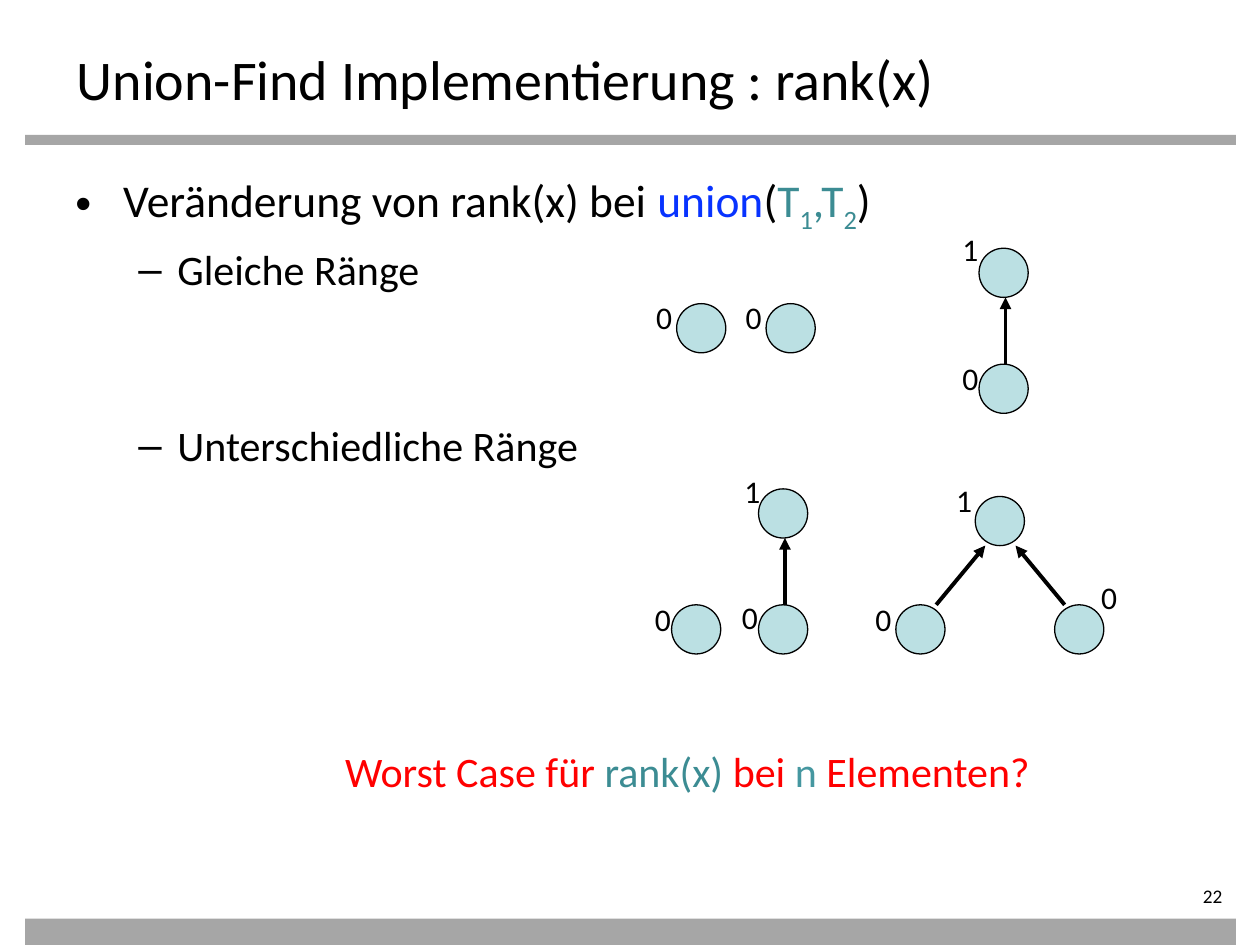
from dataclasses import dataclass

import pptx
import pptx.dml.color
import pptx.enum.shapes
import pptx.enum.text
import pptx.oxml
import pptx.oxml.ns
import pptx.util
from lxml import etree

Inches = pptx.util.Inches
Pt = pptx.util.Pt
RGBColor = pptx.dml.color.RGBColor
MSO_SHAPE = pptx.enum.shapes.MSO_SHAPE
MSO_ANCHOR = pptx.enum.text.MSO_ANCHOR
PP_ALIGN = pptx.enum.text.PP_ALIGN
qn = pptx.oxml.ns.qn

BLACK = RGBColor(0x00, 0x00, 0x00)
GREY = RGBColor(0xA6, 0xA6, 0xA6)
NODE_FILL = RGBColor(0xBB, 0xE0, 0xE3)
BLUE = RGBColor(0x08, 0x33, 0xFF)
TEAL = RGBColor(0x3C, 0x8C, 0x93)
LIGHT_TEAL = RGBColor(0x45, 0x97, 0xA0)
RED = RGBColor(0xFF, 0x00, 0x00)
FONT = "Calibri"
NODE_SIZE = 0.39


@dataclass
class Node:
    left: float
    top: float
    rank: str
    rank_left: float
    rank_top: float


@dataclass
class Arrow:
    start: tuple[float, float]
    end: tuple[float, float]


@dataclass
class Piece:
    text: str
    color: RGBColor = BLACK
    subscript: bool = False


@dataclass
class Bullet:
    pieces: list[Piece]
    mark: str
    size: int
    margin: float
    hanging: float
    space_before: int = 0


NODES = [
    Node(5.37, 2.41, "0", 5.11, 2.32),
    Node(6.08, 2.41, "0", 5.82, 2.32),
    Node(7.77, 1.97, "1", 7.54, 1.78),
    Node(7.77, 2.89, "0", 7.54, 2.80),
    Node(6.02, 3.88, "1", 5.81, 3.70),
    Node(6.02, 4.80, "0", 5.79, 4.70),
    Node(5.33, 4.80, "0", 5.10, 4.71),
    Node(7.74, 3.94, "1", 7.49, 3.77),
    Node(7.11, 4.80, "0", 6.85, 4.71),
    Node(8.37, 4.80, "0", 8.64, 4.54),
]
ARROWS = [
    Arrow((7.98, 2.89), (7.98, 2.36)),
    Arrow((6.23, 4.80), (6.23, 4.27)),
    Arrow((7.43, 4.80), (7.82, 4.33)),
    Arrow((8.45, 4.80), (8.06, 4.33)),
]
BULLETS = [
    Bullet([Piece("Veränderung von rank(x) bei "), Piece("union", BLUE), Piece("("),
            Piece("T", TEAL), Piece("1", TEAL, True), Piece(",T", TEAL),
            Piece("2", TEAL, True), Piece(")")], "•", 26, 0.38, 0.38),
    Bullet([Piece("Gleiche Ränge")], "–", 24, 0.81, 0.31, 5),
    # The wide gap leaves room for the first row of trees
    Bullet([Piece("Unterschiedliche Ränge")], "–", 24, 0.81, 0.31, 72),
]
QUESTION = [
    Piece("Worst Case für", RED), Piece(" rank(x) ", TEAL), Piece("bei ", RED),
    Piece("n ", LIGHT_TEAL), Piece("Elementen?", RED),
]


def add_pieces(paragraph, pieces: list[Piece], size: int) -> None:
    for piece in pieces:
        run = paragraph.add_run()
        run.text = piece.text
        run.font.name = FONT
        run.font.size = Pt(size)
        run.font.color.rgb = piece.color
        if piece.subscript:
            run.font._element.set("baseline", "-25000")


def add_text(slide, left: float, top: float, width: float, height: float,
             pieces: list[Piece], size: int, wrap: bool = True):
    box = slide.shapes.add_textbox(Inches(left), Inches(top), Inches(width), Inches(height))
    frame = box.text_frame
    frame.word_wrap = wrap
    add_pieces(frame.paragraphs[0], pieces, size)
    return frame


def add_bar(slide, top: float, height: float) -> None:
    bar = slide.shapes.add_shape(
        MSO_SHAPE.RECTANGLE, Inches(0.2), Inches(top), Inches(9.61), Inches(height))
    bar.shadow.inherit = False
    bar.fill.solid()
    bar.fill.fore_color.rgb = GREY
    bar.line.fill.background()


def add_bullets(slide, bullets: list[Bullet]) -> None:
    box = slide.shapes.add_textbox(Inches(0.5), Inches(1.32), Inches(9), Inches(5.43))
    frame = box.text_frame
    frame.word_wrap = True
    for index, bullet in enumerate(bullets):
        paragraph = frame.add_paragraph() if index else frame.paragraphs[0]
        if index:
            paragraph.level = 1
            paragraph.space_before = Pt(bullet.space_before)
        properties = paragraph._p.get_or_add_pPr()
        properties.set("marL", str(Inches(bullet.margin)))
        properties.set("indent", str(-Inches(bullet.hanging)))
        etree.SubElement(properties, qn("a:buFont")).set("typeface", "Arial")
        etree.SubElement(properties, qn("a:buChar")).set("char", bullet.mark)
        add_pieces(paragraph, bullet.pieces, bullet.size)


def add_node(slide, node: Node) -> None:
    """Draw a tree node with its rank beside it."""
    circle = slide.shapes.add_shape(
        MSO_SHAPE.OVAL, Inches(node.left), Inches(node.top),
        Inches(NODE_SIZE), Inches(NODE_SIZE))
    circle.shadow.inherit = False
    circle.fill.solid()
    circle.fill.fore_color.rgb = NODE_FILL
    circle.line.color.rgb = BLACK
    circle.line.width = Pt(0.75)
    add_text(slide, node.rank_left, node.rank_top, 0.34, 0.4,
             [Piece(node.rank)], 18, wrap=False)


def add_arrow(slide, arrow: Arrow) -> None:
    connector = slide.shapes.add_connector(
        pptx.enum.shapes.MSO_CONNECTOR.STRAIGHT,
        *(Inches(value) for value in arrow.start + arrow.end))
    connector.line.color.rgb = BLACK
    connector.line.width = Pt(2.25)
    etree.SubElement(connector.line._get_or_add_ln(), qn("a:tailEnd")).set("type", "triangle")
    etree.SubElement(connector._element.spPr, qn("a:effectLst"))


def add_title(slide, text: str) -> None:
    title = slide.shapes.title
    title.left, title.top = Inches(0.51), Inches(0.3)
    title.width, title.height = Inches(9), Inches(0.55)
    frame = title.text_frame
    frame.vertical_anchor = MSO_ANCHOR.TOP
    frame.auto_size = pptx.enum.text.MSO_AUTO_SIZE.NONE
    paragraph = frame.paragraphs[0]
    paragraph.alignment = PP_ALIGN.LEFT
    add_pieces(paragraph, [Piece(text)], 32)


def add_page_number(slide, number: str) -> None:
    frame = add_text(slide, 8.7, 7, 1.1, 0.22, [Piece(number)], 11)
    frame.margin_left = frame.margin_top = frame.margin_bottom = 0
    frame.vertical_anchor = MSO_ANCHOR.MIDDLE
    frame.paragraphs[0].alignment = PP_ALIGN.RIGHT


def main() -> None:
    presentation = pptx.Presentation()
    presentation.slide_width, presentation.slide_height = Inches(10), Inches(7.5)
    slide = presentation.slides.add_slide(presentation.slide_layouts[5])
    add_bar(slide, 1.07, 0.08)
    add_bar(slide, 7.29, 0.21)
    add_title(slide, "Union-Find Implementierung : rank(x)")
    add_bullets(slide, BULLETS)
    for node in NODES:
        add_node(slide, node)
    for arrow in ARROWS:
        add_arrow(slide, arrow)
    add_text(slide, 2.64, 5.87, 5.76, 0.5, QUESTION, 24)
    add_page_number(slide, "22")
    presentation.save("out.pptx")


if __name__ == "__main__":
    main()
